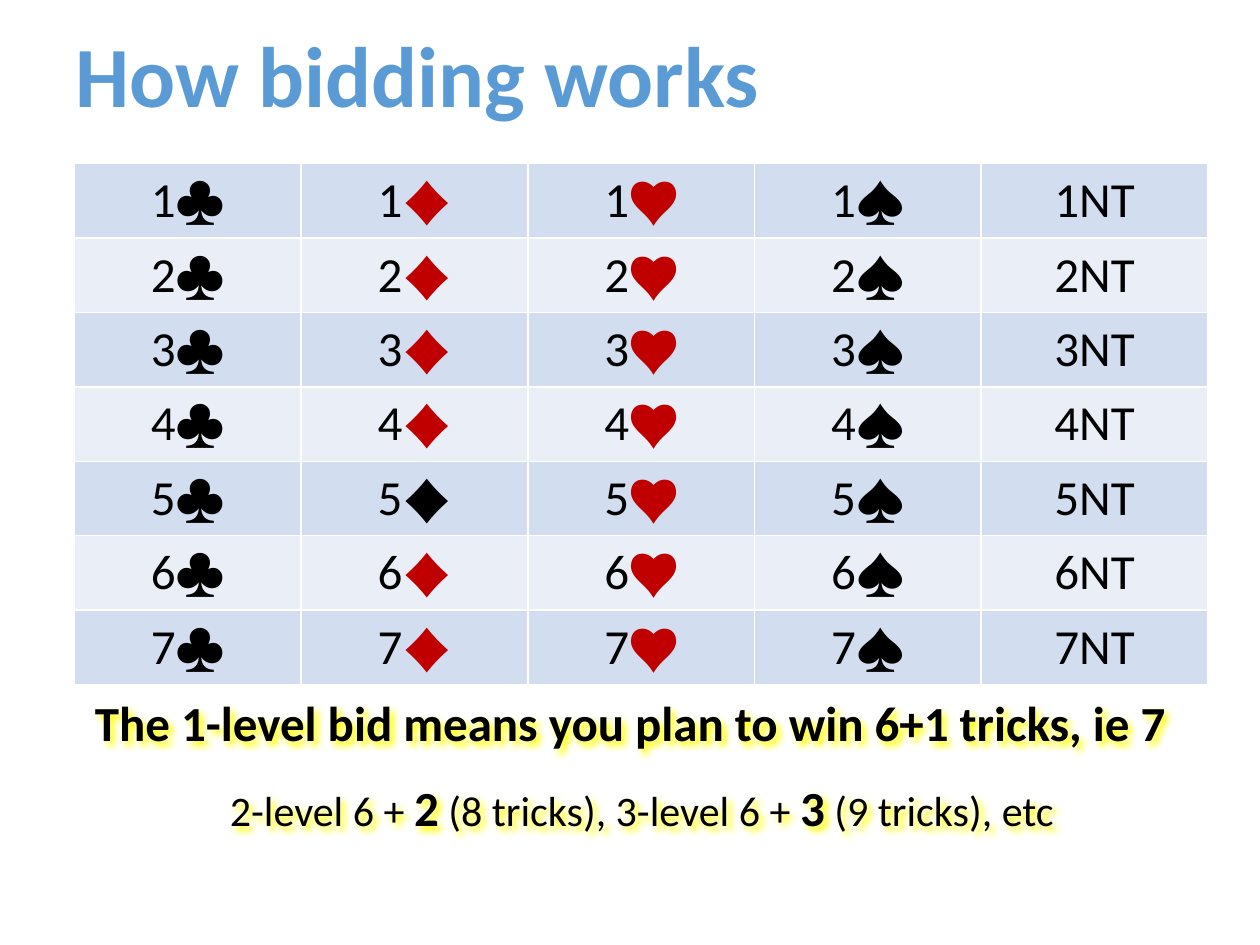
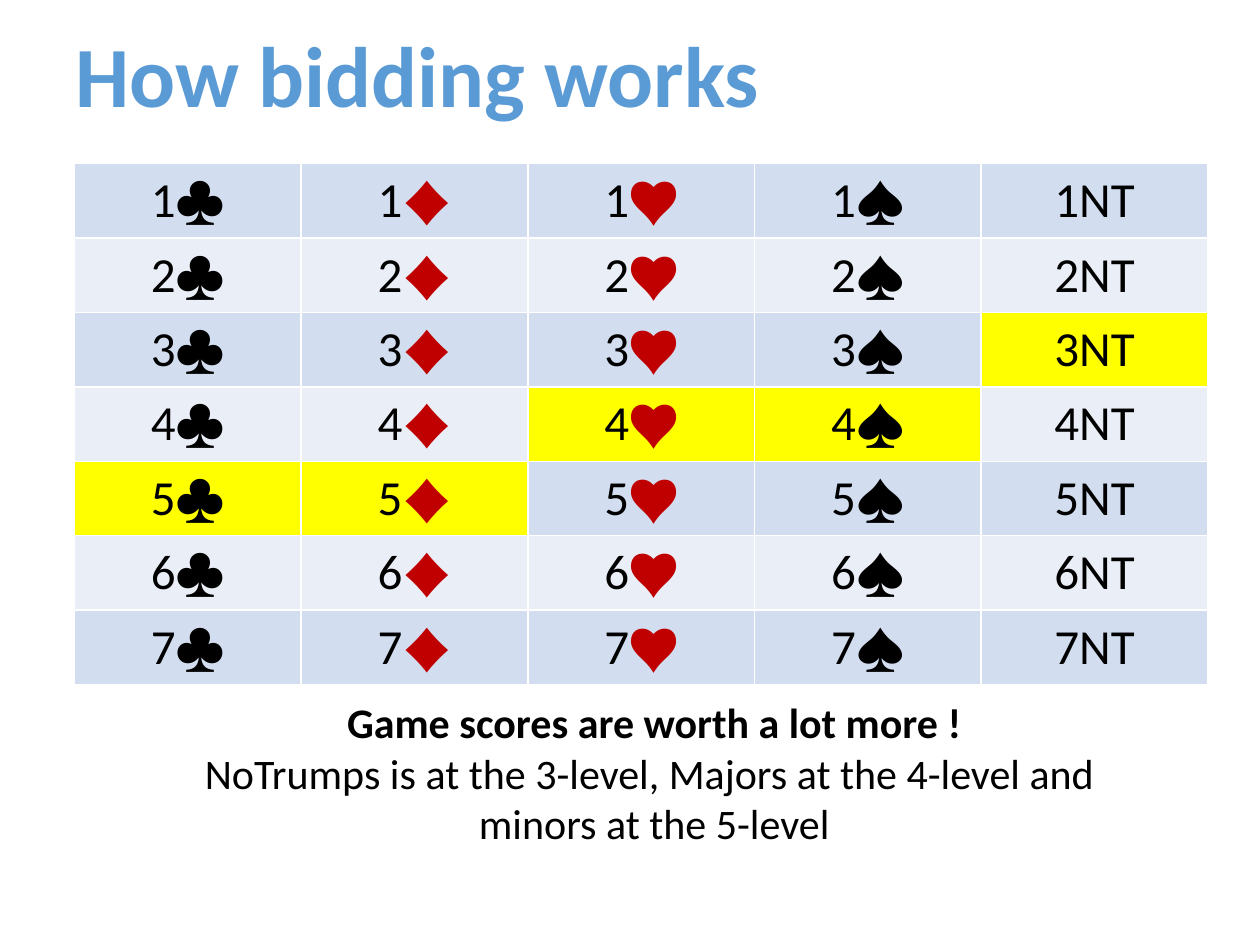
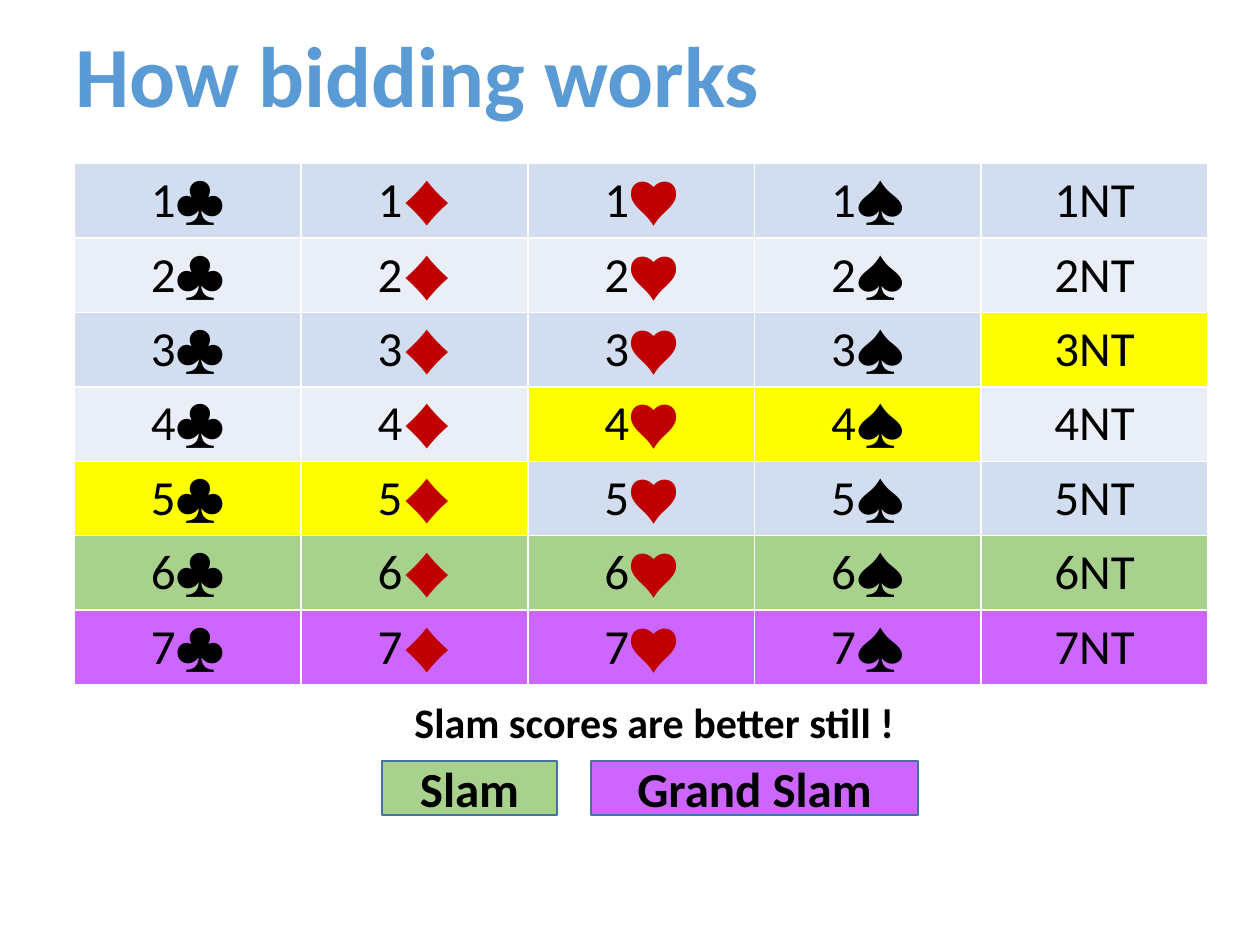
from dataclasses import dataclass, field
from typing import Any

from lxml.etree import SubElement
from pptx import Presentation
from pptx.dml.color import RGBColor
from pptx.enum.shapes import MSO_SHAPE as Preset
from pptx.enum.text import MSO_ANCHOR as Anchor, PP_ALIGN as Align
from pptx.oxml.ns import qn
from pptx.util import Cm, Pt

FONT = "Calibri"
BLACK, RED, TITLE_BLUE, KEY_BORDER = "000000", "C00000", "5B9BD5", "43739E"
YELLOW, SLAM_GREEN, GRAND_PURPLE = "FFFF00", "A9D18E", "CC66FF"
BANDS = ("D2DEEF", "EAEFF7")
DENOMINATIONS = ("♣", "♦", "♥", "♠", "NT")
RED_SUITS = ("♦", "♥")
LEVELS = range(1, 8)
TITLE = "How bidding works"

Fills = dict[str, str]
GAME_FILLS: Fills = {bid: YELLOW for bid in ("3NT", "4♥", "4♠", "5♣", "5♦")}
SLAM_FILLS: Fills = {
    f"{level}{denomination}": fill
    for level, fill in ((6, SLAM_GREEN), (7, GRAND_PURPLE))
    for denomination in DENOMINATIONS
}


@dataclass(frozen=True)
class Span:
    """A stretch of text in one format."""
    text: str
    size: int = 24
    bold: bool = False
    color: str = BLACK


@dataclass(frozen=True)
class Box:
    """A place on the slide in centimetres."""
    left: float
    top: float
    width: float
    height: float

    def lengths(self) -> tuple[Cm, Cm, Cm, Cm]:
        """Give the place as lengths."""
        return Cm(self.left), Cm(self.top), Cm(self.width), Cm(self.height)


@dataclass(frozen=True)
class Remark:
    """A centred comment below the bidding table."""
    box: Box
    paragraphs: list[list[Span]]
    halo: bool = False


@dataclass(frozen=True)
class Key:
    """A coloured label that explains a row of bids."""
    box: Box
    label: str
    fill: str


@dataclass(frozen=True)
class Lesson:
    """What one slide adds to the shared title and table."""
    remarks: list[Remark]
    fills: Fills = field(default_factory=dict)
    keys: list[Key] = field(default_factory=list)
    black_bids: tuple[str, ...] = ()


TITLE_BOX = Box(1.27, 0.53, 22.86, 2.16)
TABLE_BOX = Box(1.5, 2.7, 22.85, 11.1)
HEADER_HEIGHT, BID_HEIGHT = 0.6, 1.5

LESSONS = [
    Lesson(
        remarks=[
            Remark(
                Box(0, 13.84, 25.4, 1.45),
                [[Span("The 1-level bid means you plan to win 6+1 tricks, ie 7", 28, True)]],
                halo=True,
            ),
            Remark(
                Box(0.84, 15.54, 24.2, 1.45),
                [[
                    Span("2-level 6 + "),
                    Span("2", 28, True),
                    Span(" (8 tricks), 3-level 6 + "),
                    Span("3", 28, True),
                    Span(" (9 tricks), etc"),
                ]],
                halo=True,
            ),
        ],
        black_bids=("5♦",),
    ),
    Lesson(
        remarks=[
            Remark(
                Box(1.09, 13.92, 24.2, 3.33),
                [
                    [Span("Game scores are worth a lot more !", bold=True)],
                    [Span("NoTrumps is at the 3-level, Majors at the 4-level and \nminors at the 5-level")],
                ],
            )
        ],
        fills=GAME_FILLS,
    ),
    Lesson(
        remarks=[
            Remark(
                Box(1.09, 13.92, 24.2, 1.27),
                [[Span("Slam scores are better still !", bold=True)]],
            )
        ],
        fills=GAME_FILLS | SLAM_FILLS,
        keys=[
            Key(Box(7.7, 15.34, 3.53, 1.09), "Slam", SLAM_GREEN),
            Key(Box(11.91, 15.34, 6.6, 1.09), "Grand Slam", GRAND_PURPLE),
        ],
    ),
]


def rgb(color: str) -> RGBColor:
    """Turn a hex string into a colour."""
    return RGBColor.from_string(color)


def apply(target: Any, values: dict[str, Any]) -> None:
    """Set each attribute named in the format values."""
    for name, value in values.items():
        setattr(target, name, value)


def fill_solid(target: Any, color: str) -> None:
    """Fill a shape or cell with one colour."""
    target.fill.solid()
    target.fill.fore_color.rgb = rgb(color)


def write(paragraph: Any, spans: list[Span], align: Align = Align.CENTER) -> None:
    """Write formatted spans into a paragraph."""
    paragraph.alignment = align
    for span in spans:
        for index, line in enumerate(span.text.split("\n")):
            if index:
                paragraph.add_line_break()
            run = paragraph.add_run()
            run.text = line
            apply(run.font, {"name": FONT, "size": Pt(span.size), "bold": span.bold})
            run.font.color.rgb = rgb(span.color)


def add_halo(remark_box: Any) -> None:
    """Give the text a soft yellow shadow."""
    effects = SubElement(remark_box._element.spPr, qn("a:effectLst"))
    shadow = SubElement(
        effects, qn("a:outerShdw"),
        blurRad="50800", dist="38100", dir="2700000", algn="tl", rotWithShape="0",
    )
    SubElement(shadow, qn("a:srgbClr"), val=YELLOW)


def add_title(slide: Any) -> None:
    """Draw the shared title."""
    frame = slide.shapes.add_textbox(*TITLE_BOX.lengths()).text_frame
    apply(frame, {"word_wrap": True, "vertical_anchor": Anchor.MIDDLE})
    write(frame.paragraphs[0], [Span(TITLE, 49, True, TITLE_BLUE)], Align.LEFT)
    frame.paragraphs[0].line_spacing = 0.9


def bid_spans(level: int, denomination: str, black: bool) -> list[Span]:
    """Split a bid where its suit is red."""
    if denomination in RED_SUITS and not black:
        return [Span(str(level), 28), Span(denomination, 28, color=RED)]
    return [Span(f"{level}{denomination}", 28)]


def add_bids(slide: Any, lesson: Lesson) -> None:
    """Draw the table of all bids under a thin empty header."""
    bids = slide.shapes.add_table(
        len(LEVELS) + 1, len(DENOMINATIONS), *TABLE_BOX.lengths()
    ).table
    for row in bids.rows:
        row.height = Cm(BID_HEIGHT)
    bids.rows[0].height = Cm(HEADER_HEIGHT)
    for column, denomination in enumerate(DENOMINATIONS):
        header = bids.cell(0, column)
        header.fill.background()
        apply(header, {"margin_top": 0, "margin_bottom": 0})
        SubElement(header.text_frame.paragraphs[0]._p, qn("a:endParaRPr"), sz="800")
        for level in LEVELS:
            bid = f"{level}{denomination}"
            cell = bids.cell(level, column)
            cell.vertical_anchor = Anchor.MIDDLE
            fill_solid(cell, lesson.fills.get(bid, BANDS[(level - 1) % 2]))
            spans = bid_spans(level, denomination, bid in lesson.black_bids)
            write(cell.text_frame.paragraphs[0], spans)


def add_remark(slide: Any, remark: Remark) -> None:
    """Draw a comment below the table."""
    remark_box = slide.shapes.add_textbox(*remark.box.lengths())
    frame = remark_box.text_frame
    frame.word_wrap = True
    for index, spans in enumerate(remark.paragraphs):
        write(frame.add_paragraph() if index else frame.paragraphs[0], spans)
    if remark.halo:
        add_halo(remark_box)


def add_key(slide: Any, key: Key) -> None:
    """Draw a coloured key label."""
    label = slide.shapes.add_shape(Preset.RECTANGLE, *key.box.lengths())
    label.shadow.inherit = False
    fill_solid(label, key.fill)
    label.line.color.rgb = rgb(KEY_BORDER)
    label.line.width = Pt(1)
    label.text_frame.vertical_anchor = Anchor.MIDDLE
    write(label.text_frame.paragraphs[0], [Span(key.label, 28, True)])


def main() -> None:
    """Build and save the presentation."""
    deck = Presentation()
    apply(deck, {"slide_width": Cm(25.4), "slide_height": Cm(19.05)})
    for lesson in LESSONS:
        slide = deck.slides.add_slide(deck.slide_layouts[6])
        add_title(slide)
        add_bids(slide, lesson)
        for remark in lesson.remarks:
            add_remark(slide, remark)
        for key in lesson.keys:
            add_key(slide, key)
    deck.save("out.pptx")


if __name__ == "__main__":
    main()
